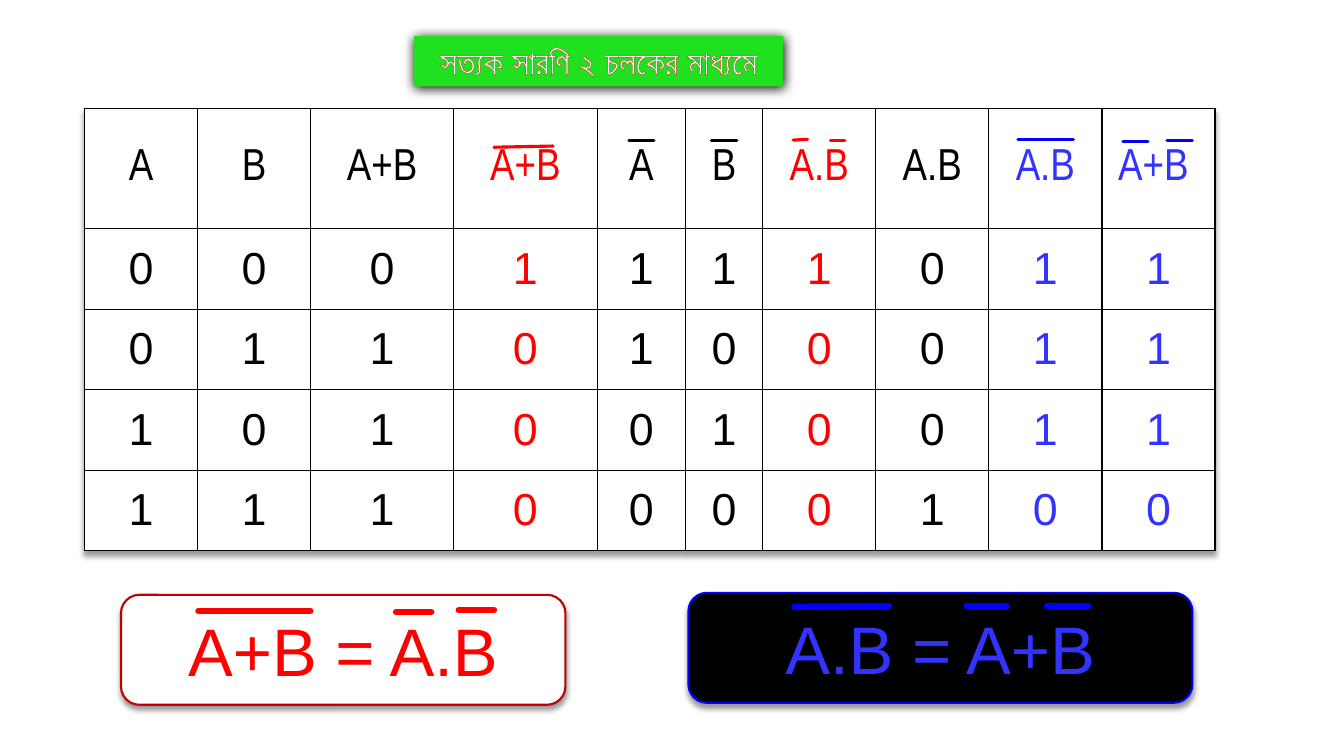
from itertools import product

from lxml.etree import SubElement
from pptx import Presentation
from pptx.dml.color import RGBColor
from pptx.enum.shapes import MSO_CONNECTOR, MSO_SHAPE
from pptx.enum.text import MSO_ANCHOR, MSO_AUTO_SIZE, PP_ALIGN
from pptx.oxml import parse_xml
from pptx.oxml.ns import nsdecls, qn
from pptx.util import Cm, Pt

BLACK, WHITE, RED = "000000", "FFFFFF", "FF0000"
DARK_RED, GREEN, BLUE, BRIGHT_BLUE = "C00000", "1FE11F", "3333FF", "0000FF"
RUST = "C42F1A"

# Heading, colour, width in cm, value for inputs a and b
COLUMNS = [
    ("A", BLACK, 2.85, lambda a, b: a),
    ("B", BLACK, 2.85, lambda a, b: b),
    ("A+B", BLACK, 3.6, lambda a, b: a | b),
    ("A+B", RED, 3.62, lambda a, b: 1 - (a | b)),
    ("A", BLACK, 2.23, lambda a, b: 1 - a),
    ("B", BLACK, 1.94, lambda a, b: 1 - b),
    ("A.B", RED, 2.85, lambda a, b: (1 - a) & (1 - b)),
    ("A.B", BLACK, 2.85, lambda a, b: a & b),
    ("A.B", BLUE, 2.85, lambda a, b: 1 - (a & b)),
    ("A+B ", BLUE, 2.85, lambda a, b: (1 - a) | (1 - b)),
]
HEADING_HEIGHT, ROW_HEIGHT = 3.02, 2.03

# Overlines: x1, y1, x2, y2 in cm, with the colour in the heading row
HEADING_BARS = [
    (12.45, 3.71, 13.94, 3.68, RED),
    (15.85, 3.53, 16.48, 3.53, BLACK),
    (17.93, 3.53, 18.57, 3.53, BLACK),
    (19.99, 3.53, 20.35, 3.51, RED),
    (20.93, 3.53, 21.29, 3.53, RED),
    (25.65, 3.51, 27.05, 3.51, BRIGHT_BLUE),
    (28.3, 3.56, 28.93, 3.56, BRIGHT_BLUE),
    (29.41, 3.53, 30.05, 3.53, BRIGHT_BLUE),
]
RED_EQUATION_BARS = [(5, 15.39, 7.82, 15.39), (9.98, 15.42, 10.87, 15.42),
                     (11.56, 15.37, 12.45, 15.37)]
BLUE_EQUATION_BARS = [(20.02, 15.29, 22.4, 15.27), (24.36, 15.27, 25.37, 15.27),
                      (26.39, 15.27, 27.43, 15.27)]


def rgb(color):
    return RGBColor.from_string(color)


def add_shadow(effects, opacity, blur, distance):
    effects.append(parse_xml(
        f'<a:outerShdw {nsdecls("a")} blurRad="{Pt(blur)}" dist="{Pt(distance)}"'
        f' dir="5400000" algn="ctr" rotWithShape="0"><a:srgbClr val="{BLACK}">'
        f'<a:alpha val="{opacity * 1000}"/></a:srgbClr></a:outerShdw>'))


def write(frame, text, size, font, color):
    frame.text = text
    paragraph = frame.paragraphs[0]
    paragraph.alignment = PP_ALIGN.CENTER
    run = paragraph.runs[0]
    run.font.size = Pt(size)
    run.font.name = font
    run.font.color.rgb = rgb(color)
    return run


def add_panel(shapes, preset, box, fill, shadow, line=None):
    panel = shapes.add_shape(preset, *map(Cm, box))
    panel.fill.solid()
    panel.fill.fore_color.rgb = rgb(fill)
    if line:
        panel.line.color.rgb = rgb(line)
        panel.line.width = Pt(1.5)
    else:
        panel.line.fill.background()
    panel.shadow.inherit = False
    add_shadow(panel._element.spPr.find(qn("a:effectLst")), *shadow)
    return panel


def add_overline(shapes, ends, color, width):
    overline = shapes.add_connector(MSO_CONNECTOR.STRAIGHT, *map(Cm, ends))
    overline.line.color.rgb = rgb(color)
    overline.line.width = Pt(width)
    properties = overline._element.spPr
    properties.find(qn("a:ln")).set("cap", "rnd")
    SubElement(properties, qn("a:effectLst"))


def add_title(shapes):
    title = add_panel(shapes, MSO_SHAPE.RECTANGLE, (10.44, 0.91, 9.3, 1.27),
                      GREEN, (100, 8.5, 1))
    frame = title.text_frame
    frame.vertical_anchor = MSO_ANCHOR.TOP
    frame.auto_size = MSO_AUTO_SIZE.SHAPE_TO_FIT_TEXT
    run = write(frame, "সত্যক সারণি ২ চলকের মাধ্যমে", 24, "Roboto", WHITE)
    run.font.bold = True
    run._r.get_or_add_rPr().insert(0, parse_xml(
        f'<a:ln {nsdecls("a")} w="{Pt(0.8)}"><a:solidFill>'
        f'<a:srgbClr val="{RUST}"/></a:solidFill></a:ln>'))


def fill_cell(cell, text, font, color):
    cell.vertical_anchor = MSO_ANCHOR.MIDDLE
    write(cell.text_frame, text, 32, font, color)
    properties = cell._tc.get_or_add_tcPr()
    for side in "LRTB":
        properties.append(parse_xml(
            f'<a:ln{side} {nsdecls("a")} w="{Pt(1)}"><a:solidFill>'
            f'<a:srgbClr val="{BLACK}"/></a:solidFill></a:ln{side}>'))
    cell.fill.solid()
    cell.fill.fore_color.rgb = rgb(WHITE)


def add_truth_table(shapes):
    inputs = list(product((0, 1), repeat=2))
    width = sum(column[2] for column in COLUMNS)
    height = HEADING_HEIGHT + ROW_HEIGHT * len(inputs)
    table = shapes.add_table(len(inputs) + 1, len(COLUMNS), Cm(2.13), Cm(2.74),
                             Cm(width), Cm(height)).table
    table.first_row = table.horz_banding = False
    effects = parse_xml(f'<a:effectLst {nsdecls("a")}/>')
    add_shadow(effects, 40, 4, 3)
    table._tbl.tblPr.insert(0, effects)

    table.rows[0].height = Cm(HEADING_HEIGHT)
    for row in range(1, len(inputs) + 1):
        table.rows[row].height = Cm(ROW_HEIGHT)
    for col, (heading, color, col_width, value) in enumerate(COLUMNS):
        table.columns[col].width = Cm(col_width)
        fill_cell(table.cell(0, col), heading, "Arial Narrow", color)
        for row, (a, b) in enumerate(inputs, start=1):
            fill_cell(table.cell(row, col), str(value(a, b)), "Arial", color)


def add_equation(shapes, text, box, fill, line, color, bars, bar_color):
    equation = shapes.add_group_shape().shapes
    panel = add_panel(equation, MSO_SHAPE.FLOWCHART_ALTERNATE_PROCESS, box, fill,
                      (40, 4, 3), line)
    panel.text_frame.vertical_anchor = MSO_ANCHOR.MIDDLE
    write(panel.text_frame, text, 48, "Arial", color)
    for ends in bars:
        add_overline(equation, ends, bar_color, 4.5)


def main():
    deck = Presentation()
    deck.slide_width, deck.slide_height = Cm(33.87), Cm(19.05)
    shapes = deck.slides.add_slide(deck.slide_layouts[6]).shapes

    # Truth table with its overlined headings
    add_truth_table(shapes)
    for *ends, color in HEADING_BARS:
        add_overline(shapes, ends, color, 2.25)

    # Title
    add_title(shapes)

    # Equations below the table
    add_equation(shapes, "A+B = A.B", (3.05, 14.99, 11.2, 2.77),
                 WHITE, DARK_RED, RED, RED_EQUATION_BARS, RED)
    add_equation(shapes, "A.B = A+B", (17.35, 14.94, 12.7, 2.77),
                 BLACK, BRIGHT_BLUE, BLUE, BLUE_EQUATION_BARS, BRIGHT_BLUE)

    deck.save("out.pptx")


if __name__ == "__main__":
    main()
